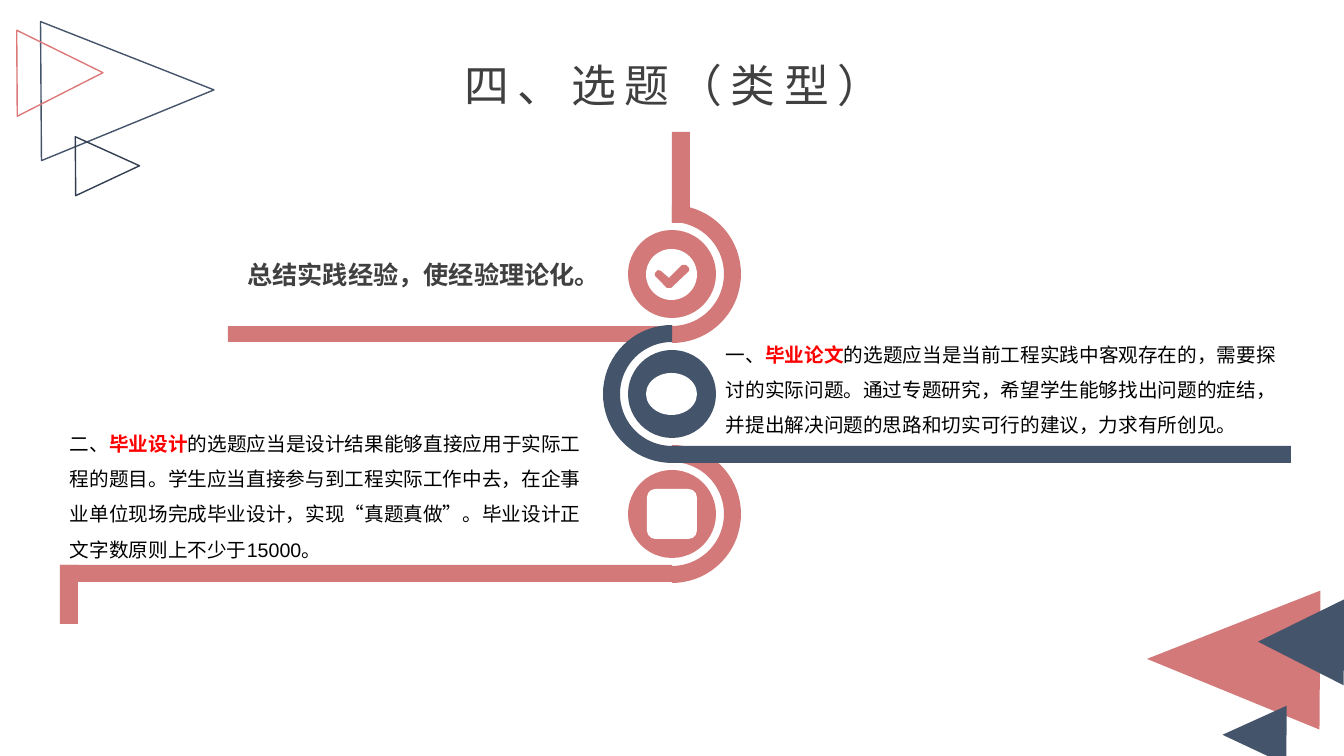
from math import cos, radians, sin

from lxml.etree import SubElement
from pptx import Presentation
from pptx.dml.color import RGBColor
from pptx.enum.shapes import MSO_SHAPE
from pptx.enum.text import MSO_ANCHOR, MSO_AUTO_SIZE, PP_ALIGN
from pptx.oxml.ns import qn
from pptx.util import Pt

PX = 914400 / 100.8  # EMU per px
COLORS = {"rose": "D37979", "navy": "44546A", "dark_navy": "333F50",
          "light_rose": "DD7979", "white": "FFFFFF", "grey": "404040",
          "black": "000000", "red": "FF0000"}
CJK = "Noto Sans CJK JP"


def paint(sp, fill=None, line=None):
    sp.shadow.inherit = False
    if fill:
        sp.fill.solid()
        sp.fill.fore_color.rgb = RGBColor.from_string(COLORS[fill])
    else:
        sp.fill.background()
    if line:
        sp.line.color.rgb = RGBColor.from_string(COLORS[line])
        sp.line.width = Pt(1)
    else:
        sp.line.fill.background()


def style(r, size, color, bold=False, font=CJK):
    r.font.size = Pt(size)
    r.font.bold = bold
    r.font.color.rgb = RGBColor.from_string(COLORS[color])
    r.font.name = font
    rPr = r.font._element
    rPr.set("lang", "zh-CN")
    SubElement(rPr, qn("a:ea")).set("typeface", CJK)


prs = Presentation()
prs.slide_width, prs.slide_height = round(1344 * PX), round(756 * PX)
s = prs.slides.add_slide(prs.slide_layouts[5])
shapes = s.shapes

# Corner triangles: left, top, width, height, rotation, fill, line
for *box, rotation, fill, line in [
    (1164, 573, 139, 173, 270.4, "rose", None),
    (1225, 703, 59, 64, 270.4, "navy", None),
    (1258, 599, 86, 86, 270.4, "navy", None),
    (58, 4, 139, 173, 89.6, None, "navy"),
    (78, 134, 59, 64, 89.6, None, "dark_navy"),
    (17, 30, 86, 86, 89.6, None, "light_rose"),
]:
    sp = shapes.add_shape(MSO_SHAPE.ISOSCELES_TRIANGLE, *[round(v * PX) for v in box])
    sp.rotation = rotation
    paint(sp, fill, line)

# Winding road: step, colour, side of the bend, bars
AXIS, FIRST_Y, STEP = 672, 274, 120
OUTER, INNER, DISC = 69, 52, 88
for step, color, side, bars in [
    (0, "rose", 1, [(228, 326, 444, 16), (672, 132, 18, 91)]),
    (2, "rose", 1, [(60, 565, 612, 17), (60, 565, 18, 59)]),
    (1, "navy", -1, [(672, 446, 619, 17)]),
]:
    cy = FIRST_Y + step * STEP
    for bar in bars:
        paint(shapes.add_shape(MSO_SHAPE.RECTANGLE, *[round(v * PX) for v in bar]), color)
    angles = range(-90, 91, 5)
    edge = [(OUTER, a) for a in angles] + [(INNER, a) for a in reversed(angles)]
    points = [((AXIS + side * radius * cos(radians(a))) * PX,
               (cy + radius * sin(radians(a))) * PX) for radius, a in edge]
    bend = shapes.build_freeform(*points[0])
    bend.add_line_segments(points[1:])
    paint(bend.convert_to_shape(), color)
    disc = [AXIS - DISC // 2, cy - DISC // 2, DISC, DISC]
    paint(shapes.add_shape(MSO_SHAPE.OVAL, *[round(v * PX) for v in disc]), color)

# White icons on the discs
for kind, *box in [(MSO_SHAPE.OVAL, 646, 249, 51, 51),
                   (MSO_SHAPE.OVAL, 646, 373, 51, 42),
                   (MSO_SHAPE.ROUNDED_RECTANGLE, 647, 489, 50, 50)]:
    paint(shapes.add_shape(kind, *[round(v * PX) for v in box]), "white")

# Check mark
check = [(689, 271), (671, 288), (667, 288), (655, 276), (655, 273), (658, 270),
         (661, 271), (669, 278), (682, 265), (686, 265), (689, 268)]
points = [(x * PX, y * PX) for x, y in check]
mark = shapes.build_freeform(*points[0])
mark.add_line_segments(points[1:])
paint(mark.convert_to_shape(), "rose")

# Summary line
tf = shapes.add_textbox(*[round(v * PX) for v in (235, 254, 375, 40)]).text_frame
tf.word_wrap = False
p = tf.paragraphs[0]
p.text = "总结实践经验，使经验理论化。"
p.alignment = PP_ALIGN.RIGHT
style(p.runs[0], 18, "grey", bold=True)

# Topic paragraphs
for box, number, topic, body in [
    ((716, 326, 575, 117), "一、", "毕业论文",
     "的选题应当是当前工程实践中客观存在的，需要探讨的实际问题。通过专题研究，"
     "希望学生能够找出问题的症结，并提出解决问题的思路和切实可行的建议，力求有所创见。"),
    ((60, 415, 550, 152), "二、", "毕业设计",
     "的选题应当是设计结果能够直接应用于实际工程的题目。学生应当直接参与到工程实际工作中去，"
     "在企事业单位现场完成毕业设计，实现“真题真做”。毕业设计正文字数原则上不少于15000。"),
]:
    tf = shapes.add_textbox(*[round(v * PX) for v in box]).text_frame
    tf.word_wrap = True
    p = tf.paragraphs[0]
    p.line_spacing = Pt(25.2)
    for text, color in [(number, "black"), (topic, "red"), (body, "black")]:
        r = p.add_run()
        r.text = text
        style(r, 14, color, bold=color == "red", font="Arial")

# Title
title = shapes.title
title.left, title.top, title.width, title.height = [round(v * PX) for v in (442, 65, 463, 40)]
tf = title.text_frame
tf.text = "四、选题（类型）"
tf.word_wrap = True
tf.auto_size = MSO_AUTO_SIZE.NONE
tf.vertical_anchor = MSO_ANCHOR.MIDDLE
tf.margin_left = tf.margin_right = tf.margin_top = tf.margin_bottom = 0
p = tf.paragraphs[0]
p.alignment = PP_ALIGN.CENTER
style(p.runs[0], 32, "grey")
p.runs[0].font._element.set("spc", "600")

prs.save("out.pptx")
